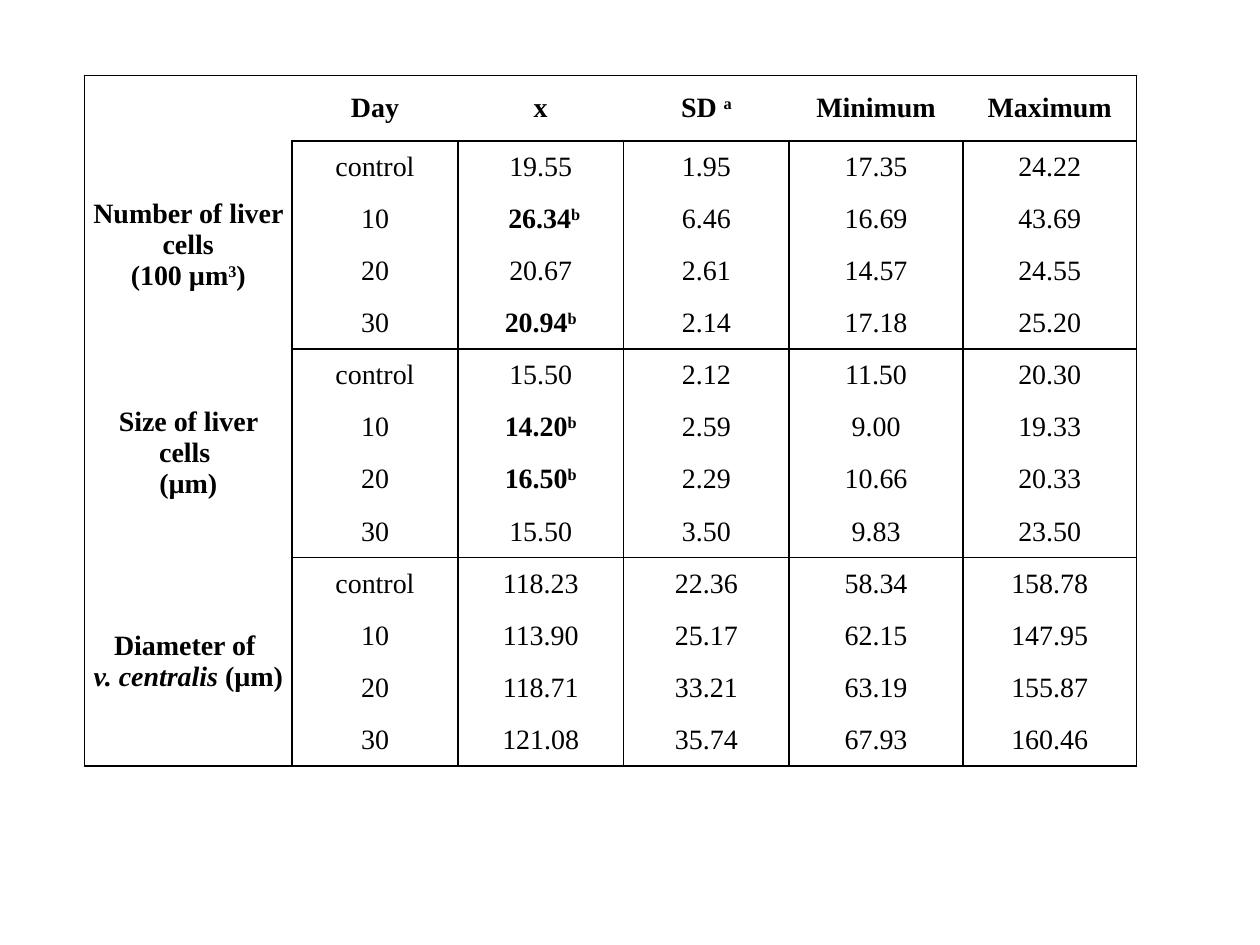
import pptx
import pptx.dml.color
import pptx.enum.text
import pptx.oxml
import pptx.oxml.ns
import pptx.util

Cm = pptx.util.Cm
HUES = {"ink": "000000"}
PLAIN = "{2D5ABB26-0587-4C30-8999-92F81FD0307C}"
WIDTHS = [4.19, 3.34, 3.34, 3.34, 3.5, 3.5]
HEAD = ["Day", "x", "SD ^a", "Minimum", "Maximum"]
GROUPS = [
    (
        [[("Number of liver cells", {})],
         [("(100 µm", {}), ("3", {"sup": True}), (")", {})]],
        [["control", "19.55", "1.95", "17.35", "24.22"],
         ["10", " 26.34^b", "6.46", "16.69", "43.69"],
         ["20", "20.67", "2.61", "14.57", "24.55"],
         ["30", "20.94^b", "2.14", "17.18", "25.20"]],
    ),
    (
        [[("Size of liver cells ", {})], [("(µm)", {})]],
        [["control", "15.50", "2.12", "11.50", "20.30"],
         ["10", "14.20^b", "2.59", "9.00", "19.33"],
         ["20", "16.50^b", "2.29", "10.66", "20.33"],
         ["30", "15.50", "3.50", "9.83", "23.50"]],
    ),
    (
        [[("Diameter of ", {})],
         [("v. centralis ", {"ital": True}), ("(µm)", {})]],
        [["control", "118.23", "22.36", "58.34", "158.78"],
         ["10", "113.90", "25.17", "62.15", "147.95"],
         ["20", "118.71", "33.21", "63.19", "155.87"],
         ["30", "121.08", "35.74", "67.93", "160.46"]],
    ),
]


def write(para, text, font="Times New Roman", size=16, hue="ink",
          bold=False, ital=False, sup=False):
    run = para.add_run()
    run.text = text
    run.font.name = font
    run.font.size = pptx.util.Pt(size)
    run.font.bold = bold
    run.font.italic = ital
    run.font.color.rgb = pptx.dml.color.RGBColor.from_string(HUES[hue])
    if sup:
        run.font._element.set("baseline", "30000")


class Deck:
    def __init__(self):
        self.file = pptx.Presentation()
        self.file.slide_width = Cm(25.4)
        self.file.slide_height = Cm(19.05)
        self.slide = self.file.slides.add_slide(self.file.slide_layouts[6])

    def table(self, left, top, widths, heights):
        frame = self.slide.shapes.add_table(
            len(heights), len(widths), Cm(left), Cm(top),
            Cm(sum(widths)), Cm(sum(heights)))
        grid = frame.table
        grid.first_row = grid.horz_banding = False
        grid._tbl.tblPr.find(pptx.oxml.ns.qn("a:tableStyleId")).text = PLAIN
        for col, width in zip(grid.columns, widths):
            col.width = Cm(width)
        for row, height in zip(grid.rows, heights):
            row.height = Cm(height)
        return grid

    def cell(self, cell, paras, **form):
        cell.vertical_anchor = pptx.enum.text.MSO_ANCHOR.MIDDLE
        cell.margin_left = cell.margin_right = Cm(0.18)
        cell.margin_top = cell.margin_bottom = 0
        frame = cell.text_frame
        for num, runs in enumerate(paras):
            para = frame.add_paragraph() if num else frame.paragraphs[0]
            para.alignment = pptx.enum.text.PP_ALIGN.CENTER
            for text, more in runs:
                write(para, text, **{**form, **more})

    def value(self, cell, text, bold=False):
        main, mark, note = text.partition("^")
        runs = [(main, {})]
        if mark:
            runs.append((note, {"sup": True}))
        self.cell(cell, [runs], bold=bold or bool(mark))

    def edges(self, cell, **sides):
        cell.fill.background()
        space = pptx.oxml.ns.nsdecls("a")
        props = cell._tc.get_or_add_tcPr()
        for spot, side in enumerate("LRTB"):
            size = sides.get(side, 0)
            fill = "<a:noFill/>"
            if size:
                fill = f'<a:solidFill><a:srgbClr val="{HUES["ink"]}"/></a:solidFill>'
            line = f'<a:ln{side} {space} w="{pptx.util.Pt(size)}">{fill}</a:ln{side}>'
            props.insert(spot, pptx.oxml.parse_xml(line))


def main():
    deck = Deck()
    grid = deck.table(1.7, 1.52, WIDTHS, [1.32] + [1.05] * 12)
    last = len(WIDTHS) - 1

    deck.edges(grid.cell(0, 0), L=1, T=1)
    for col, text in enumerate(HEAD, 1):
        deck.value(grid.cell(0, col), text, bold=True)
        deck.edges(grid.cell(0, col), T=1, B=1.5, R=int(col == last))

    for part, (label, rows) in enumerate(GROUPS):
        start = 1 + part * len(rows)
        end = start + len(rows) - 1
        grid.cell(start, 0).merge(grid.cell(end, 0))
        deck.cell(grid.cell(start, 0), label, bold=True)
        for row, values in enumerate(rows, start):
            deck.edges(grid.cell(row, 0), L=1, R=1.5,
                       B=int(part == len(GROUPS) - 1))
            for col, text in enumerate(values, 1):
                cell = grid.cell(row, col)
                deck.value(cell, text)
                above = 1.5 if row == 1 else int(row == start)
                deck.edges(cell, L=1.5 if col == 1 else 1, R=1,
                           T=above, B=int(row == end))

    deck.file.save("out.pptx")


if __name__ == "__main__":
    main()
